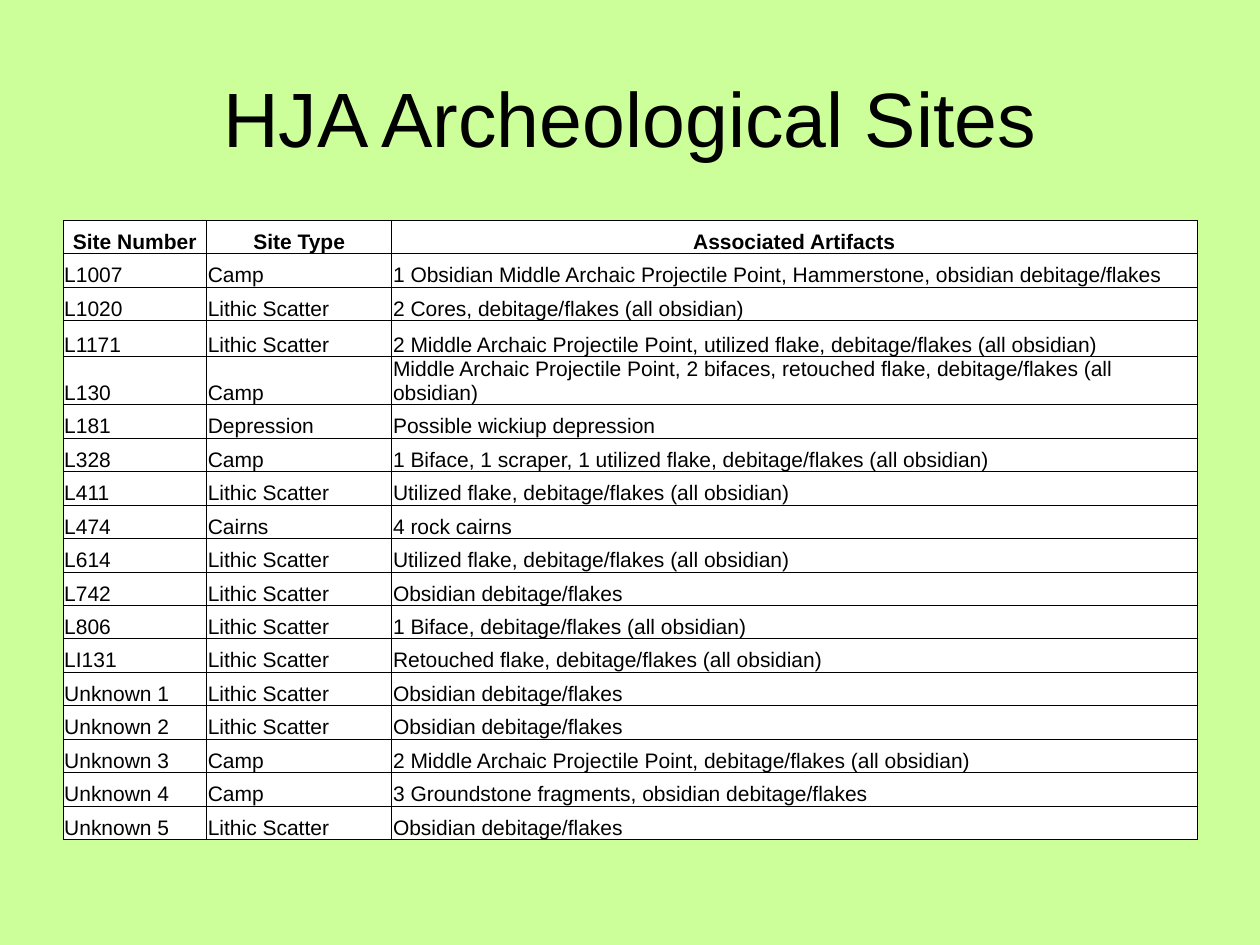
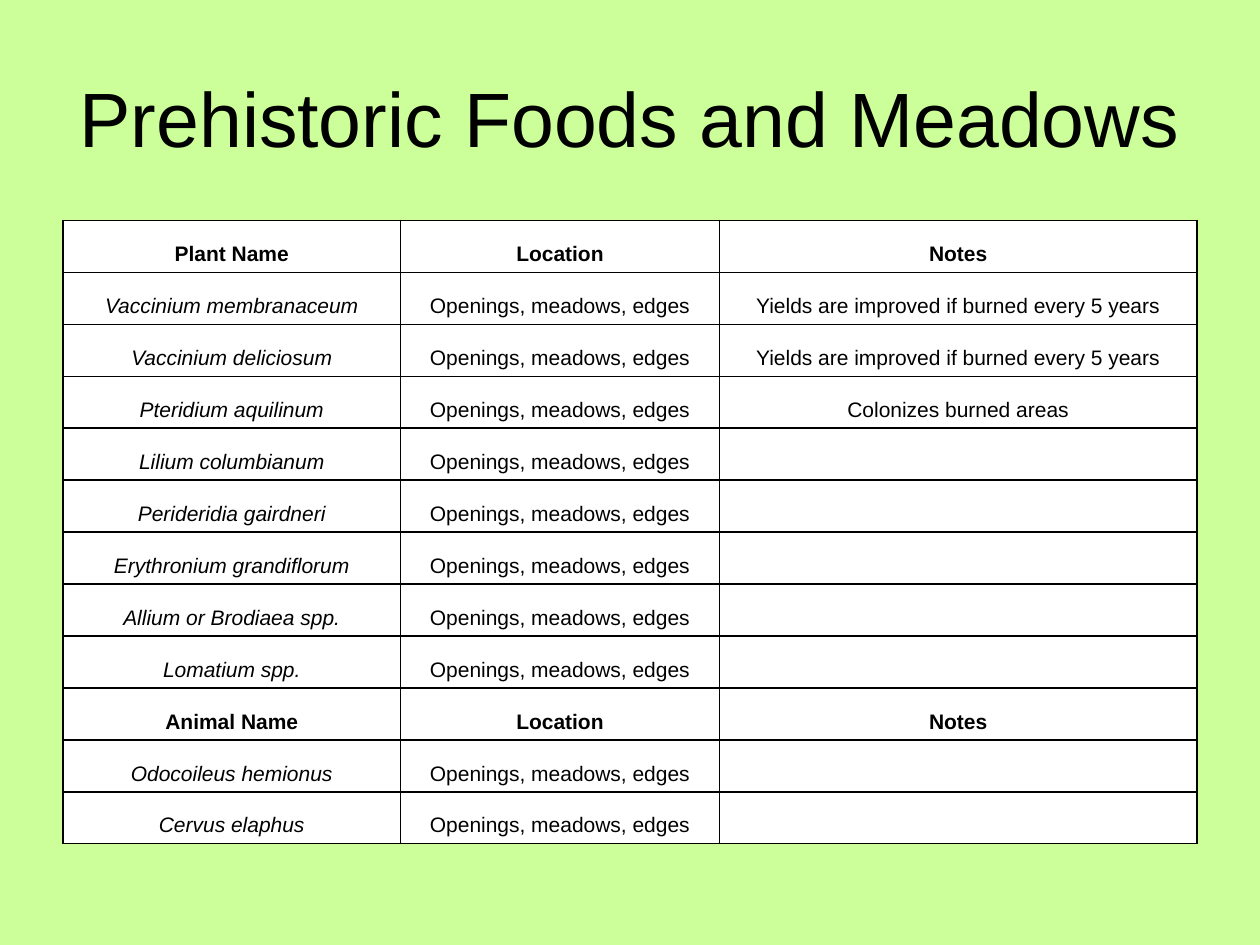
import pptx
import pptx.util
import pptx.dml.color
import pptx.enum.text
import pptx.oxml.ns
from lxml import etree

COLOURS = {"meadow": "CCFF99", "paper": "FFFFFF", "ink": "000000"}
FONT = "Arial"
SLIDE_WIDTH, SLIDE_HEIGHT = pptx.util.Inches(10), pptx.util.Inches(7.5)
TITLE_BOX = (0.05, 0.04, 0.9, 1 / 6)
SITES_BOX = (0.05, 0.2333, 0.9, 0.6547)
FOODS_BOX = (0.05, 0.2333, 0.9, 0.66)
CENTRE = pptx.enum.text.PP_ALIGN.CENTER
LEFT = pptx.enum.text.PP_ALIGN.LEFT

SITES = [
    ("Site Number", "Site Type", "Associated Artifacts"),
    ("L1007", "Camp", "1 Obsidian Middle Archaic Projectile Point, Hammerstone, obsidian debitage/flakes"),
    ("L1020", "Lithic Scatter", "2 Cores, debitage/flakes (all obsidian)"),
    ("L1171", "Lithic Scatter", "2 Middle Archaic Projectile Point, utilized flake, debitage/flakes (all obsidian)"),
    ("L130", "Camp", "Middle Archaic Projectile Point, 2 bifaces, retouched flake, debitage/flakes (all obsidian)"),
    ("L181", "Depression", "Possible wickiup depression"),
    ("L328", "Camp", "1 Biface, 1 scraper, 1 utilized flake, debitage/flakes (all obsidian)"),
    ("L411", "Lithic Scatter", "Utilized flake, debitage/flakes (all obsidian)"),
    ("L474", "Cairns", "4 rock cairns"),
    ("L614", "Lithic Scatter", "Utilized flake, debitage/flakes (all obsidian)"),
    ("L742", "Lithic Scatter", "Obsidian debitage/flakes"),
    ("L806", "Lithic Scatter", "1 Biface, debitage/flakes (all obsidian)"),
    ("LI131", "Lithic Scatter", "Retouched flake, debitage/flakes (all obsidian)"),
    ("Unknown 1", "Lithic Scatter", "Obsidian debitage/flakes"),
    ("Unknown 2", "Lithic Scatter", "Obsidian debitage/flakes"),
    ("Unknown 3", "Camp", "2 Middle Archaic Projectile Point, debitage/flakes (all obsidian)"),
    ("Unknown 4", "Camp", "3 Groundstone fragments, obsidian debitage/flakes"),
    ("Unknown 5", "Lithic Scatter", "Obsidian debitage/flakes"),
]
SITE_ROW_SHARES = [{"L1171": 1.07, "L130": 1.43}.get(site[0], 1) for site in SITES]

HABITAT = "Openings, meadows, edges"
BURNING = "Yields are improved if burned every 5 years"
PLANTS = [
    ("Vaccinium membranaceum", BURNING),
    ("Vaccinium deliciosum", BURNING),
    ("Pteridium aquilinum", "Colonizes burned areas"),
    ("Lilium columbianum", ""),
    ("Perideridia gairdneri", ""),
    ("Erythronium grandiflorum", ""),
    ("Allium or Brodiaea spp.", ""),
    ("Lomatium spp.", ""),
]
ANIMALS = [("Odocoileus hemionus", ""), ("Cervus elaphus", "")]


def colour(name):
    """Return a palette colour."""
    return pptx.dml.color.RGBColor.from_string(COLOURS[name])


def place(box):
    """Turn shares of the slide into left, top, width and height."""
    left, top, width, height = box
    return (round(left * SLIDE_WIDTH), round(top * SLIDE_HEIGHT),
            round(width * SLIDE_WIDTH), round(height * SLIDE_HEIGHT))


def style_text(paragraph, size, align, bold=False, italic=False):
    """Align a paragraph and format its runs."""
    paragraph.alignment = align
    for run in paragraph.runs:
        run.font.name = FONT
        run.font.size = pptx.util.Pt(size)
        run.font.bold = bold
        run.font.italic = italic
        run.font.color.rgb = colour("ink")


def border_cell(cell, points):
    """Draw a solid line on all four sides of a cell."""
    qn = pptx.oxml.ns.qn
    properties = cell._tc.get_or_add_tcPr()
    for side in ("lnL", "lnR", "lnT", "lnB"):
        line = etree.SubElement(properties, qn(f"a:{side}"), w=str(pptx.util.Pt(points)))
        fill = etree.SubElement(line, qn("a:solidFill"))
        etree.SubElement(fill, qn("a:srgbClr"), val=COLOURS["ink"])


def add_titled_slide(deck, heading):
    """Add a slide with the shared title style."""
    slide = deck.slides.add_slide(deck.slide_layouts.get_by_name("Title Only"))
    title = slide.shapes.title
    title.left, title.top, title.width, title.height = place(TITLE_BOX)
    title.text_frame.text = heading
    title.text_frame.vertical_anchor = pptx.enum.text.MSO_ANCHOR.MIDDLE
    style_text(title.text_frame.paragraphs[0], 44, CENTRE)
    return slide


def add_grid(slide, box, entries, column_shares, row_shares, line, style_for, insets=None):
    """Fill a box with a ruled table whose tracks follow the given shares."""
    left, top, width, height = place(box)
    table = slide.shapes.add_table(len(entries), len(column_shares), left, top, width, height).table
    table.first_row = table.horz_banding = False
    for column, share in zip(table.columns, column_shares):
        column.width = round(width * share / sum(column_shares))
    for row, share, entry in zip(table.rows, row_shares, entries):
        row.height = round(height * share / sum(row_shares))
        for position, (cell, words) in enumerate(zip(row.cells, entry)):
            border_cell(cell, line)
            cell.fill.solid()
            cell.fill.fore_color.rgb = colour("paper")
            cell.vertical_anchor = pptx.enum.text.MSO_ANCHOR.BOTTOM
            if insets:
                (cell.margin_left, cell.margin_top,
                 cell.margin_right, cell.margin_bottom) = map(pptx.util.Inches, insets)
            cell.text_frame.text = words
            style_text(cell.text_frame.paragraphs[0], 12, **style_for(entry, position))


def site_style(entry, position):
    """Centre and embolden the header of the sites table."""
    header = entry is SITES[0]
    return {"align": CENTRE if header else LEFT, "bold": header}


def food_style(entry, position):
    """Embolden the two headers and set species names in italics."""
    header = entry[1] == "Location"
    return {"align": CENTRE, "bold": header, "italic": position == 0 and not header}


def add_sites_slide(deck):
    """Build the slide of archeological sites."""
    slide = add_titled_slide(deck, "HJA Archeological Sites")
    add_grid(slide, SITES_BOX, SITES, (1.14, 1.47, 6.39), SITE_ROW_SHARES, 0.5,
             site_style, insets=(0.01, 0.01, 0.01, 0))


def add_foods_slide(deck):
    """Build the slide of plants and animals used as food."""
    slide = add_titled_slide(deck, "Prehistoric Foods and Meadows")
    foods = []
    for kind, species in (("Plant", PLANTS), ("Animal", ANIMALS)):
        foods.append((f"{kind} Name", "Location", "Notes"))
        foods.extend((name, HABITAT, note) for name, note in species)
    add_grid(slide, FOODS_BOX, foods, (2.68, 2.53, 3.79), [1] * len(foods), 1, food_style)


def main():
    """Build and save the deck."""
    deck = pptx.Presentation()
    deck.slide_width, deck.slide_height = SLIDE_WIDTH, SLIDE_HEIGHT
    background = deck.slide_master.background.fill
    background.solid()
    background.fore_color.rgb = colour("meadow")
    add_sites_slide(deck)
    add_foods_slide(deck)
    deck.save("out.pptx")


if __name__ == "__main__":
    main()
